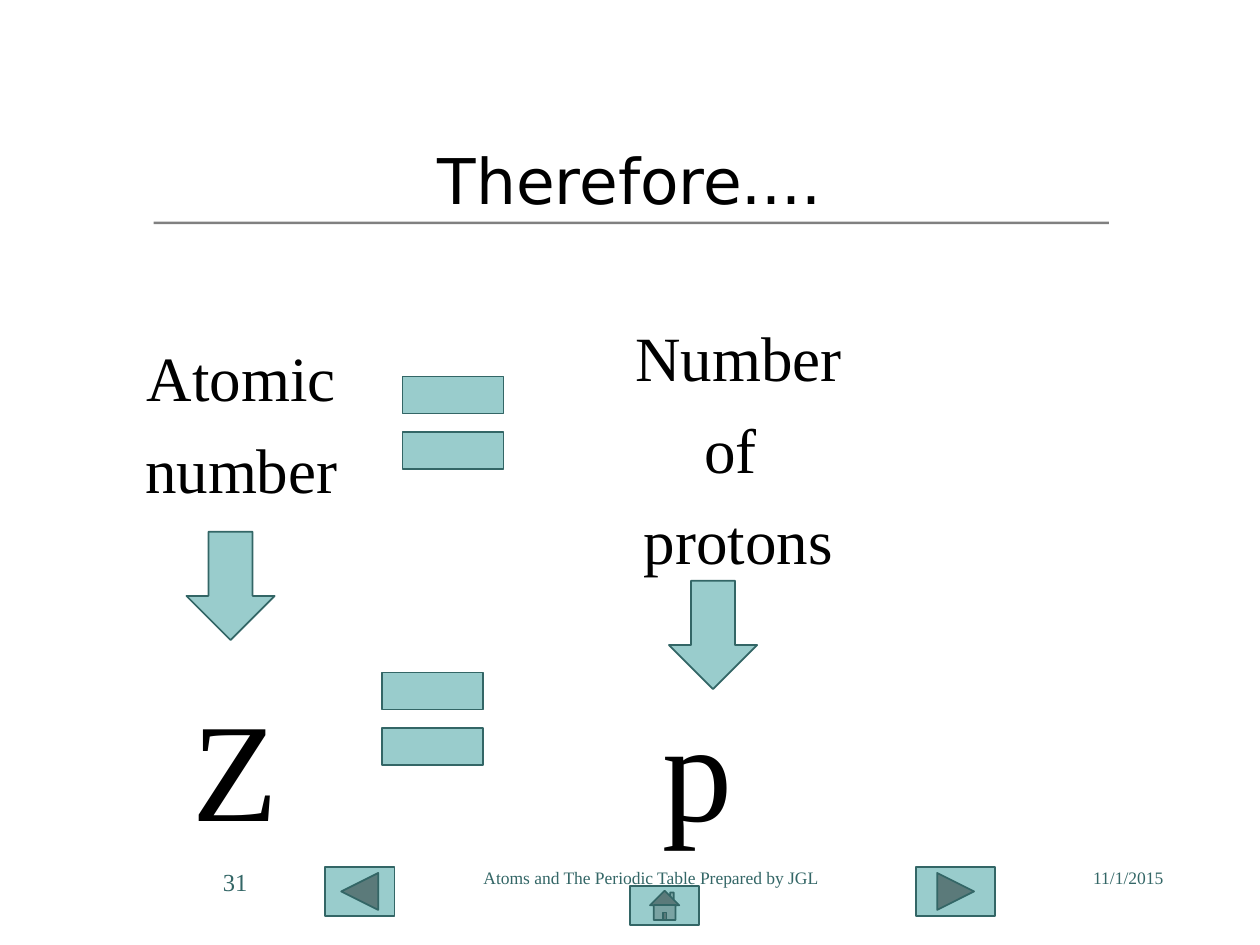
import pptx
import pptx.util
import pptx.dml.color
import pptx.enum.shapes
import pptx.enum.text

Inches = pptx.util.Inches
Pt = pptx.util.Pt
SHAPE = pptx.enum.shapes.MSO_SHAPE
ALIGN = pptx.enum.text.PP_ALIGN
SERIF = "Times New Roman"
BLACK, TEAL, AQUA, GRAY = "000000", "336666", "99CCCC", "808080"


def rgb(value):
    """Return the colour for a hex string."""
    return pptx.dml.color.RGBColor.from_string(value)


def add_run(p, text, size, font, color):
    """Add one formatted run to a paragraph."""
    r = p.add_run()
    r.text = text
    r.font.size = Pt(size)
    r.font.name = font
    r.font.color.rgb = rgb(color)


def add_text(s, box, lines, size, color=BLACK, align=ALIGN.CENTER, inset=0.05):
    """Add a text box with one paragraph per line."""
    tf = s.shapes.add_textbox(*map(Inches, box)).text_frame
    tf.word_wrap = True
    tf.margin_top = Inches(inset)
    for i, line in enumerate(lines):
        p = tf.add_paragraph() if i else tf.paragraphs[0]
        p.alignment = align
        if i:
            p.space_before = Pt(size / 4)
        add_run(p, line, size, SERIF, color)


def add_figure(s, kind, box, fill=AQUA, line=TEAL):
    """Add a preset shape with a fill and an optional outline."""
    sp = s.shapes.add_shape(kind, *map(Inches, box))
    sp.shadow.inherit = False
    sp.fill.solid()
    sp.fill.fore_color.rgb = rgb(fill)
    if line:
        sp.line.color.rgb = rgb(line)
        sp.line.width = Pt(1)
    else:
        sp.line.fill.background()


def add_header(s, left, top, width, height):
    """Format the title and draw the rule beneath it."""
    title = s.shapes.title
    title.left, title.top = Inches(left), Inches(top)
    title.width, title.height = Inches(width), Inches(height)
    tf = title.text_frame
    tf.vertical_anchor = pptx.enum.text.MSO_ANCHOR.MIDDLE
    p = tf.paragraphs[0]
    p.alignment = ALIGN.CENTER
    add_run(p, "Therefore....", 36, "DejaVu Sans", BLACK)
    add_figure(s, SHAPE.RECTANGLE, (left + 1.22, top + 0.84, 7.58, 0.02), GRAY, None)


def add_term(s, box, lines, arrow, symbol, symbol_left):
    """Add a term, the arrow below it and its symbol."""
    left, top, width, height = box
    add_text(s, box, lines, 36, inset=0.11)
    add_figure(s, SHAPE.DOWN_ARROW, (left + arrow[0], top + arrow[1], 0.7, 0.86))
    add_text(s, (left + symbol_left, 5.23, 2.34, 2.27), [symbol], 80, inset=0.18)


def add_equation(s, left, top):
    """Set the two terms side by side with equals signs between them."""
    add_term(s, (left, top + 0.16, 2.11, 2.03), ["Atomic", "number"],
             (0.62, 1.64), "Z", -0.16)
    add_term(s, (left + 3.83, top, 2.34, 2.27), ["Number", "of ", "protons"],
             (0.62, 2.19), "p", -0.32)
    for dx, dy in ((2.19, 0.31), (2.03, 2.66)):
        add_figure(s, SHAPE.MATH_EQUAL, (left + dx, top + dy, 1.09, 1.25))


def add_footer(s, left, top):
    """Add the navigation buttons and the footer texts."""
    for kind, dx, dy, width, height in (
        (SHAPE.ACTION_BUTTON_BACK_OR_PREVIOUS, 0.91, 0.05, 0.55, 0.39),
        (SHAPE.ACTION_BUTTON_FORWARD_OR_NEXT, 5.6, 0.05, 0.63, 0.39),
        (SHAPE.ACTION_BUTTON_HOME, 3.33, 0.2, 0.55, 0.31),
    ):
        add_figure(s, kind, (left + dx, top + dy, width, height))
    for text, dx, width, size, align in (
        ("31", 0, 1.42, 14, ALIGN.LEFT),
        ("Atoms and The Periodic Table Prepared by JGL", 1.91, 3.17, 10, ALIGN.CENTER),
        ("11/1/2015", 5.58, 2.08, 10, ALIGN.RIGHT),
    ):
        add_text(s, (left + dx, top, width, 0.5), [text], size, TEAL, align)


def main():
    """Build the slide and save it."""
    prs = pptx.Presentation()
    prs.slide_width, prs.slide_height = Inches(10), Inches(7.5)
    s = prs.slides.add_slide(prs.slide_layouts[5])
    add_header(s, 0, 0.92, 10, 1)
    add_equation(s, 0.86, 2.42)
    add_footer(s, 1.67, 6.83)
    prs.save("out.pptx")


if __name__ == "__main__":
    main()
